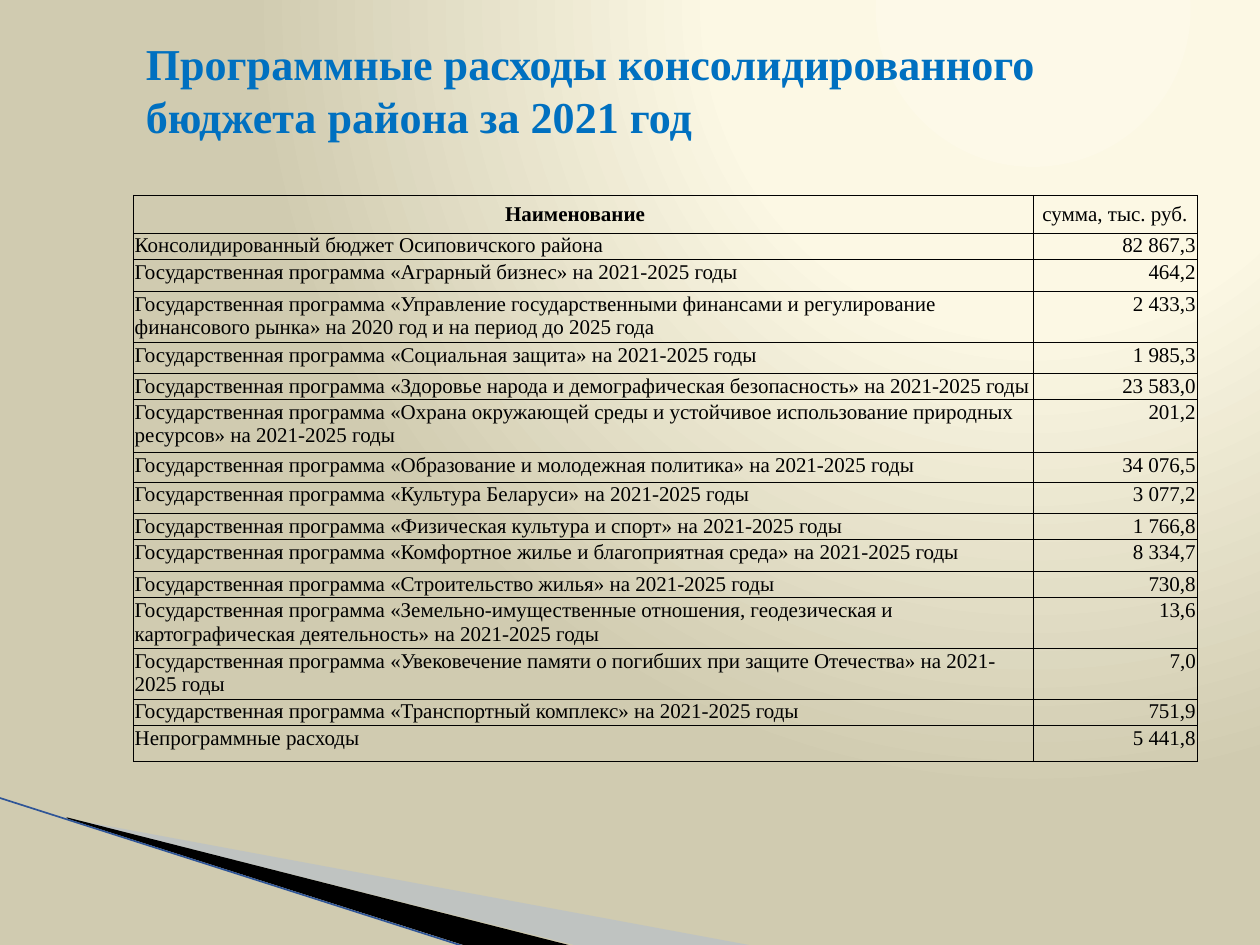
from lxml import etree
from pptx import Presentation
from pptx.dml.color import RGBColor
from pptx.enum.shapes import MSO_CONNECTOR
from pptx.enum.text import MSO_ANCHOR as ANCHOR, PP_ALIGN as ALIGN
from pptx.oxml import parse_xml
from pptx.oxml.ns import nsdecls, qn
from pptx.util import Pt

COLORS = {
    "cream": "FDF9E8", "ivory": "FCF8E4", "sand": "D0CBB0",
    "mist": "A7B9DB", "black": "000000", "edge": "2F5597", "title": "0070C0",
}
FONT = "Times New Roman"
TABLE_LEFT, TABLE_TOP, TABLE_WIDTH = 76.3, 111.6, 607.7
COLUMN_WIDTHS = (514, 93.7)

ROWS = [  # name, amount, row height
    ("Наименование", "сумма, тыс. руб.", 21.6),
    ("Консолидированный бюджет Осиповичского района", "82 867,3", 15),
    ("Государственная программа «Аграрный бизнес» на 2021-2025 годы", "464,2", 18.4),
    ("Государственная программа «Управление государственными финансами и регулирование "
     "финансового рынка» на 2020 год и на период до 2025 года", "2 433,3", 29),
    ("Государственная программа «Социальная защита» на 2021-2025 годы", "1 985,3", 17.8),
    ("Государственная программа «Здоровье народа и демографическая безопасность» "
     "на 2021-2025 годы", "23 583,0", 15),
    ("Государственная программа «Охрана окружающей среды и устойчивое использование "
     "природных ресурсов» на 2021-2025 годы", "201,2", 30.2),
    ("Государственная программа «Образование и молодежная политика» на 2021-2025 годы",
     "34 076,5", 16.9),
    ("Государственная программа «Культура Беларуси» на 2021-2025 годы", "3 077,2", 17.8),
    ("Государственная программа «Физическая культура и спорт» на 2021-2025 годы",
     "1 766,8", 15),
    ("Государственная программа «Комфортное жилье и благоприятная среда» "
     "на 2021-2025 годы", "8 334,7", 18.4),
    ("Государственная программа «Строительство жилья» на 2021-2025 годы", "730,8", 15),
    ("Государственная программа «Земельно-имущественные отношения, геодезическая и "
     "картографическая деятельность» на 2021-2025 годы", "13,6", 28.8),
    ("Государственная программа «Увековечение памяти о погибших при защите Отечества» "
     "на 2021-2025 годы", "7,0", 29),
    ("Государственная программа «Транспортный комплекс» на 2021-2025 годы", "751,9", 15),
    ("Непрограммные расходы", "5 441,8", 20.6),
]


def write(p, text, color, **font):
    r = p.add_run()
    r.text = text
    r.font.color.rgb = RGBColor.from_string(COLORS[color])
    for name, value in {"name": FONT, **font}.items():
        setattr(r.font, name, value)


prs = Presentation()
prs.slide_width, prs.slide_height = Pt(720), Pt(540)
s = prs.slides.add_slide(prs.slide_layouts[6])

# Background: circular gradient centred at the upper right
s.background.fill.gradient()
grad = s.element.find(".//" + qn("a:gradFill"))
for child in list(grad):
    grad.remove(child)
stops = "".join(
    f'<a:gs pos="{pos * 1000}"><a:srgbClr val="{COLORS[name]}"/></a:gs>'
    for pos, name in ((0, "cream"), (40, "ivory"), (100, "sand")))
grad.append(parse_xml(f'<a:gsLst {nsdecls("a")}>{stops}</a:gsLst>'))
grad.append(parse_xml(
    f'<a:path {nsdecls("a")} path="circle">'
    '<a:fillToRect l="65000" t="0" r="0" b="98000"/></a:path>'))

# Corner wedges
wedges = [
    ("mist", 40, [(39.6, 468.5), (428.4, 540.5), (328.3, 540.5), (39.6, 468)]),
    ("black", 100, [(38.2, 467.3), (329, 540.7), (267.8, 541.4), (38.9, 468)]),
]
for color, opacity, (start, *rest) in wedges:
    builder = s.shapes.build_freeform(*start, scale=12700)
    builder.add_line_segments(rest)
    sp = builder.convert_to_shape()
    sp.shadow.inherit = False
    sp.fill.solid()
    sp.fill.fore_color.rgb = RGBColor.from_string(COLORS[color])
    sp.line.fill.background()
    if opacity < 100:
        clr = sp.element.spPr.find(qn("a:solidFill")).find(qn("a:srgbClr"))
        etree.SubElement(clr, qn("a:alpha"), val=str(opacity * 1000))

edge = s.shapes.add_connector(
    MSO_CONNECTOR.STRAIGHT, Pt(-0.7), Pt(455.8), Pt(267.1), Pt(541.4))
edge.line.color.rgb = RGBColor.from_string(COLORS["edge"])
edge.line.width = Pt(0.95)
etree.SubElement(edge.element.spPr, qn("a:effectLst"))

# Expenditure table
tbl = s.shapes.add_table(
    len(ROWS), 2, Pt(TABLE_LEFT), Pt(TABLE_TOP), Pt(TABLE_WIDTH),
    Pt(sum(row[2] for row in ROWS))).table
tbl.first_row = tbl.horz_banding = False
for column, width in zip(tbl.columns, COLUMN_WIDTHS):
    column.width = Pt(width)
for i, (*texts, height) in enumerate(ROWS):
    tbl.rows[i].height = Pt(height)
    header = i == 0
    for j, text in enumerate(texts):
        cell = tbl.cell(i, j)
        layout = {
            "margin_left": Pt(0.7), "margin_top": Pt(0.7), "margin_bottom": Pt(0),
            "margin_right": Pt(10 if header and j == 0 else 0.7),
            "vertical_anchor": ANCHOR.MIDDLE if header else ANCHOR.TOP,
        }
        for name, value in layout.items():
            setattr(cell, name, value)
        tcPr = cell._tc.get_or_add_tcPr()
        for side in "LRTB":
            tcPr.append(parse_xml(
                f'<a:ln{side} {nsdecls("a")} w="6350"><a:solidFill>'
                f'<a:srgbClr val="{COLORS["black"]}"/></a:solidFill></a:ln{side}>'))
        cell.fill.background()
        p = cell.text_frame.paragraphs[0]
        p.alignment = ALIGN.CENTER if header else (ALIGN.LEFT, ALIGN.RIGHT)[j]
        write(p, text, "black", size=Pt(12), bold=header and j == 0)

# Title
tf = s.shapes.add_textbox(
    Pt(TABLE_LEFT), Pt(21.6), Pt(TABLE_WIDTH), Pt(59)).text_frame
tf.word_wrap = True
tf.vertical_anchor = ANCHOR.MIDDLE
write(tf.paragraphs[0],
      "Программные расходы консолидированного бюджета района за 2021 год",
      "title", size=Pt(25.2), bold=True)

prs.save("out.pptx")
